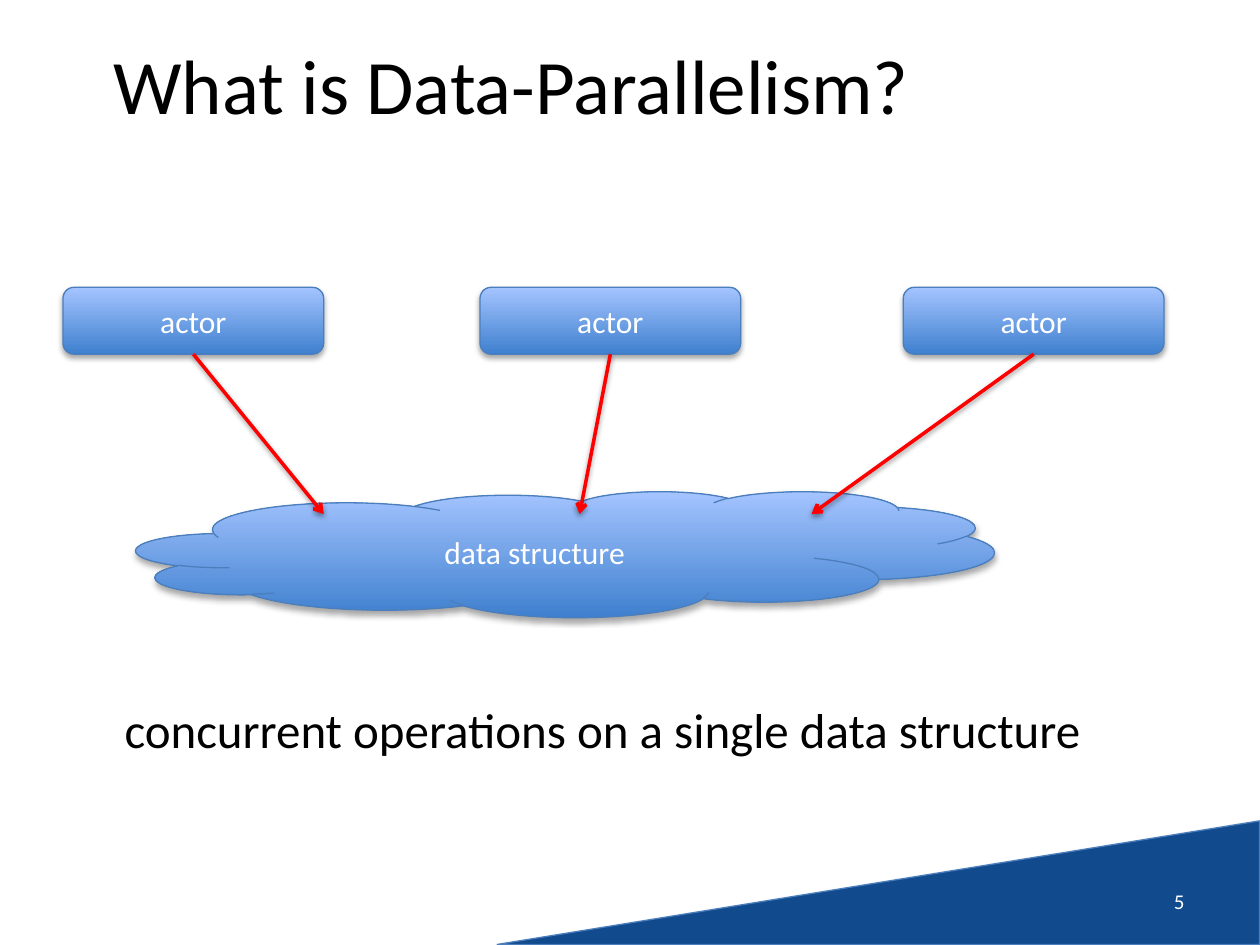
from dataclasses import dataclass

from lxml.etree import SubElement
from pptx import Presentation
from pptx.dml.color import RGBColor as RGB
from pptx.enum.shapes import MSO_CONNECTOR as Connector, MSO_SHAPE as Preset
from pptx.enum.text import MSO_ANCHOR as Anchor, PP_ALIGN as Align
from pptx.oxml.ns import qn
from pptx.util import Pt


@dataclass(frozen=True)
class Theme:
    font: str = "Calibri"
    ink: RGB = RGB(0x00, 0x00, 0x00)
    light: RGB = RGB(0xFF, 0xFF, 0xFF)
    wedge: RGB = RGB(0x11, 0x4B, 0x8E)
    outline: RGB = RGB(0x4B, 0x7E, 0xBC)
    gradient: tuple = (RGB(0x3F, 0x80, 0xCE), RGB(0xA4, 0xC4, 0xFF))
    arrow: RGB = RGB(0xFF, 0x00, 0x00)
    title_size: float = 44
    caption_size: float = 28
    label_size: float = 18
    number_size: float = 12
    outline_width: float = 0.75
    arrow_width: float = 2


@dataclass(frozen=True)
class Box:
    left: float
    top: float
    width: float
    height: float

    def emu(self) -> tuple:
        return Pt(self.left), Pt(self.top), Pt(self.width), Pt(self.height)


@dataclass(frozen=True)
class Actor:
    left: float      # left edge of the actor's box
    target_x: float  # where its arrow meets the data structure


THEME = Theme()
ACTORS = (Actor(36, 185), Actor(274.3, 331.2), Actor(516.2, 463.7))
ACTOR_TOP, ACTOR_WIDTH, ACTOR_HEIGHT = 164.2, 149, 38.2
TARGET_Y = 293.8


def write(frame, text: str, size: float, color: RGB, align: Align) -> None:
    frame.text = text
    paragraph = frame.paragraphs[0]
    paragraph.alignment = align
    for run in paragraph.runs:
        run.font.name = THEME.font
        run.font.size = Pt(size)
        run.font.color.rgb = color


def add_shadow(shape, distance: float, opacity: int) -> None:
    properties = shape.element.find(qn("p:spPr"))
    effects = SubElement(properties, qn("a:effectLst"))
    shadow = SubElement(effects, qn("a:outerShdw"), blurRad=str(Pt(3.15)),
                        dist=str(Pt(distance)), dir="5400000", rotWithShape="0")
    black = SubElement(shadow, qn("a:srgbClr"), val="000000")
    SubElement(black, qn("a:alpha"), val=str(opacity * 1000))


def add_preset(slide, preset: Preset, box: Box):
    """Add an outlined, shadowed preset shape, still to be filled."""
    shape = slide.shapes.add_shape(preset, *box.emu())
    shape.line.color.rgb = THEME.outline
    shape.line.width = Pt(THEME.outline_width)
    add_shadow(shape, distance=1.8, opacity=35)
    return shape


def add_node(slide, preset: Preset, box: Box, label: str):
    node = add_preset(slide, preset, box)
    node.fill.gradient()
    node.fill.gradient_angle = 90
    for stop, color in zip(node.fill.gradient_stops, THEME.gradient):
        stop.color.rgb = color
    node.text_frame.vertical_anchor = Anchor.MIDDLE
    write(node.text_frame, label, THEME.label_size, THEME.light, Align.CENTER)
    return node


def add_arrow(slide, source, target_x: float) -> None:
    arrow = slide.shapes.add_connector(
        Connector.STRAIGHT, 0, 0, Pt(target_x), Pt(TARGET_Y))
    arrow.begin_connect(source, 2)  # bottom centre of the actor
    arrow.line.color.rgb = THEME.arrow
    arrow.line.width = Pt(THEME.arrow_width)
    SubElement(arrow.line._get_or_add_ln(), qn("a:tailEnd"), type="arrow")
    add_shadow(arrow, distance=1.6, opacity=38)


def add_text(slide, box: Box, text: str, size: float, color: RGB,
             align: Align, anchor: Anchor, wrap: bool) -> None:
    frame = slide.shapes.add_textbox(*box.emu()).text_frame
    frame.word_wrap = wrap
    frame.vertical_anchor = anchor
    write(frame, text, size, color, align)


def main() -> None:
    deck = Presentation()
    deck.slide_width, deck.slide_height = Pt(720), Pt(540)
    slide = deck.slides.add_slide(deck.slide_layouts[5])

    # Corner wedge and slide number
    wedge = add_preset(slide, Preset.RIGHT_TRIANGLE,
                       Box(466.6, 286.6, 70.6, 435.6))
    wedge.rotation = 270
    wedge.fill.solid()
    wedge.fill.fore_color.rgb = THEME.wedge
    add_text(slide, Box(516.2, 500.4, 167.8, 28.8), "5", THEME.number_size,
             THEME.light, Align.RIGHT, Anchor.MIDDLE, wrap=True)

    # Title
    title = slide.shapes.title
    title.left, title.top, title.width, title.height = Box(36, 2.9, 512.6, 90).emu()
    title.text_frame.vertical_anchor = Anchor.MIDDLE
    write(title.text_frame, "What is Data-Parallelism?", THEME.title_size,
          THEME.ink, Align.CENTER)

    # Shared data structure, then the actors working on it
    add_node(slide, Preset.CLOUD, Box(77.8, 280.8, 490.3, 72), "data structure")
    nodes = [add_node(slide, Preset.ROUNDED_RECTANGLE,
                      Box(actor.left, ACTOR_TOP, ACTOR_WIDTH, ACTOR_HEIGHT), "actor")
             for actor in ACTORS]
    for node, actor in zip(nodes, ACTORS):
        add_arrow(slide, node, actor.target_x)

    # Caption
    add_text(slide, Box(64.1, 396, 567.4, 41), "concurrent operations on a single data structure",
             THEME.caption_size, THEME.ink, Align.LEFT, Anchor.TOP, wrap=False)

    deck.save("out.pptx")


if __name__ == "__main__":
    main()
